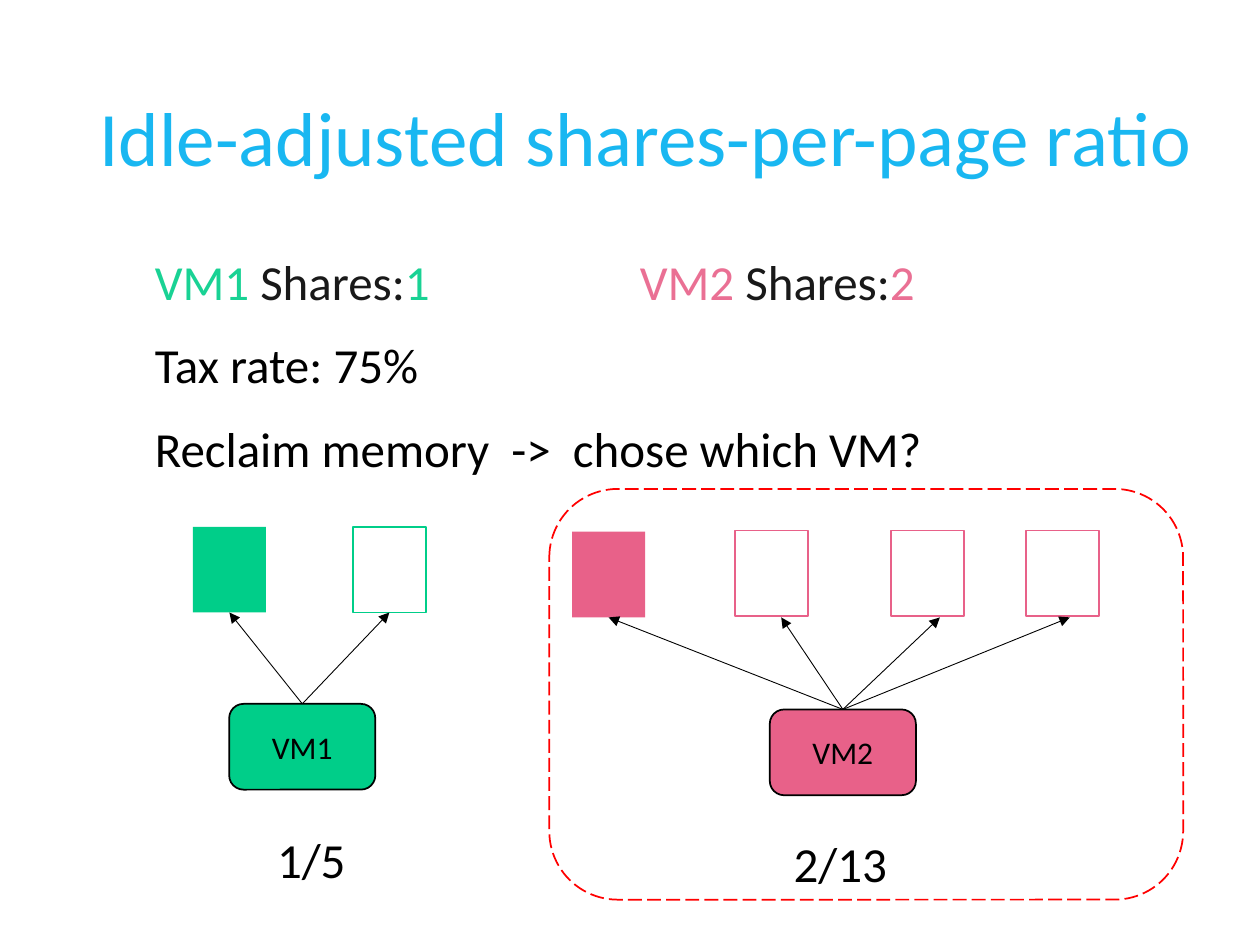
from lxml import etree
from pptx import Presentation
from pptx.dml.color import RGBColor
from pptx.enum.dml import MSO_LINE
from pptx.enum.shapes import MSO_CONNECTOR, MSO_SHAPE
from pptx.enum.text import MSO_ANCHOR, MSO_AUTO_SIZE, PP_ALIGN
from pptx.oxml.ns import qn
from pptx.util import Pt

RECTANGLE, ROUNDED = MSO_SHAPE.RECTANGLE, MSO_SHAPE.ROUNDED_RECTANGLE
STRAIGHT, LONG_DASH = MSO_CONNECTOR.STRAIGHT, MSO_LINE.LONG_DASH
MIDDLE, LEFT, CENTER = MSO_ANCHOR.MIDDLE, PP_ALIGN.LEFT, PP_ALIGN.CENTER
NO_FIT, GROW = MSO_AUTO_SIZE.NONE, MSO_AUTO_SIZE.SHAPE_TO_FIT_TEXT
TOP_SITE, BOTTOM_SITE = 0, 2

BLACK = RGBColor(0x00, 0x00, 0x00)
WHITE = RGBColor(0xFF, 0xFF, 0xFF)
BLUE = RGBColor(0x00, 0xB0, 0xF0)
GREEN = RGBColor(0x00, 0xCE, 0x89)
PINK = RGBColor(0xE8, 0x61, 0x89)
RED = RGBColor(0xFF, 0x00, 0x00)
FONT = "Calibri"

TITLE = "Idle-adjusted shares-per-page ratio"
SHARES = [("VM1", GREEN), (" Shares:", BLACK), ("1\t", GREEN),
          ("VM2", PINK), (" Shares:", BLACK), ("2", PINK)]
STATEMENTS = ["Tax rate: 75%", "Reclaim memory  ->  chose which VM?"]
SECOND_SHARES_TAB = Pt(277.2)

PAGE_WIDTH, BOX_HEIGHT, MACHINE_WIDTH = 41.8, 49, 83.5
# Each page: left, top, in use, arrow end (None means the middle of its lower side)
MACHINES = [
    {"name": "VM1", "color": GREEN, "at": (131, 402.2), "ratio": "1/5", "ratio_at": (151.2, 470.2),
     "pages": [(110.2, 301, True, None), (201.6, 301, False, None)]},
    {"name": "VM2", "color": PINK, "at": (439.9, 405.4), "ratio": "2/13", "ratio_at": (446.4, 473),
     "pages": [(326.9, 303.8, True, None), (419.8, 303.1, False, (446.4, 352.8)),
               (509, 303.1, False, (537.1, 352.8)), (586.1, 303.1, False, (611.3, 352.8))]},
]
CHOICE_FRAME = (313.9, 279.4, 362.2, 234.7)


def points(*values):
    return [Pt(value) for value in values]


def set_font(paragraph, size, color=None):
    paragraph.font.name = FONT
    paragraph.font.size = Pt(size)
    if color is not None:
        paragraph.font.color.rgb = color


def fade(paragraph):
    for color in paragraph._p.iter(qn("a:srgbClr")):
        etree.SubElement(color, qn("a:alpha")).set("val", "90000")


def add_box(slide, kind, box, fill=None, line=None):
    shape = slide.shapes.add_shape(kind, *points(*box))
    shape.shadow.inherit = False
    if fill is None:
        shape.fill.background()
    else:
        shape.fill.solid()
        shape.fill.fore_color.rgb = fill
    if line is None:
        shape.line.fill.background()
    else:
        shape.line.color.rgb = line
        shape.line.width = Pt(1)
    return shape


def add_text_box(slide, box):
    frame = slide.shapes.add_textbox(*points(*box)).text_frame
    frame.word_wrap = True
    return frame


def add_arrow(slide, machine, page, end):
    connector = slide.shapes.add_connector(STRAIGHT, *points(0, 0, *(end or (0, 0))))
    connector.begin_connect(machine, TOP_SITE)
    if end is None:
        connector.end_connect(page, BOTTOM_SITE)
    connector.line.color.rgb = BLACK
    connector.line.width = Pt(0.5)
    etree.SubElement(connector.line._get_or_add_ln(), qn("a:tailEnd")).set("type", "triangle")
    etree.SubElement(connector._element.spPr, qn("a:effectLst"))


def add_title(slide):
    title = slide.shapes.title
    title.left, title.top, title.width, title.height = points(49.7, 28.8, 650.9, 104.4)
    frame = title.text_frame
    frame.text = TITLE
    frame.auto_size = NO_FIT
    frame.vertical_anchor = MIDDLE
    paragraph = frame.paragraphs[0]
    paragraph.alignment = LEFT
    paragraph.line_spacing = 0.9
    set_font(paragraph, 44, BLUE)
    fade(paragraph)


def add_statements(slide):
    frame = add_text_box(slide, (81.4, 133.2, 552.2, 378))
    shares = frame.paragraphs[0]
    for text, color in SHARES:
        run = shares.add_run()
        run.text = text
        run.font.color.rgb = color
    fade(shares)
    for statement in STATEMENTS:
        frame.add_paragraph().text = statement
    for paragraph in frame.paragraphs:
        paragraph.line_spacing = 1.2
        paragraph.space_before = Pt(7.5)
    tabs = etree.SubElement(shares._p.get_or_add_pPr(), qn("a:tabLst"))
    etree.SubElement(tabs, qn("a:tab"), pos=str(SECOND_SHARES_TAB), algn="l")
    set_font(shares, 28)
    for paragraph in frame.paragraphs[1:]:
        set_font(paragraph, 28, BLACK)


def add_machine(slide, name, color, at, ratio, ratio_at, pages):
    machine = add_box(slide, ROUNDED, (*at, MACHINE_WIDTH, BOX_HEIGHT), color, BLACK)
    machine.text_frame.text = name
    machine.text_frame.vertical_anchor = MIDDLE
    label = machine.text_frame.paragraphs[0]
    label.alignment = CENTER
    set_font(label, 18, BLACK)
    for left, top, in_use, arrow_end in pages:
        page = add_box(slide, RECTANGLE, (left, top, PAGE_WIDTH, BOX_HEIGHT),
                       color if in_use else WHITE, None if in_use else color)
        add_arrow(slide, machine, page, arrow_end)
    frame = add_text_box(slide, (*ratio_at, 181.4, 41))
    frame.auto_size = GROW
    frame.text = ratio
    set_font(frame.paragraphs[0], 28, BLACK)


def main():
    presentation = Presentation()
    presentation.slide_width, presentation.slide_height = points(720, 540)
    slide = presentation.slides.add_slide(presentation.slide_layouts.get_by_name("Title Only"))
    add_title(slide)
    add_statements(slide)
    for machine in MACHINES:
        add_machine(slide, **machine)
    frame = add_box(slide, ROUNDED, CHOICE_FRAME, line=RED)
    frame.line.dash_style = LONG_DASH
    presentation.save("out.pptx")


if __name__ == "__main__":
    main()
